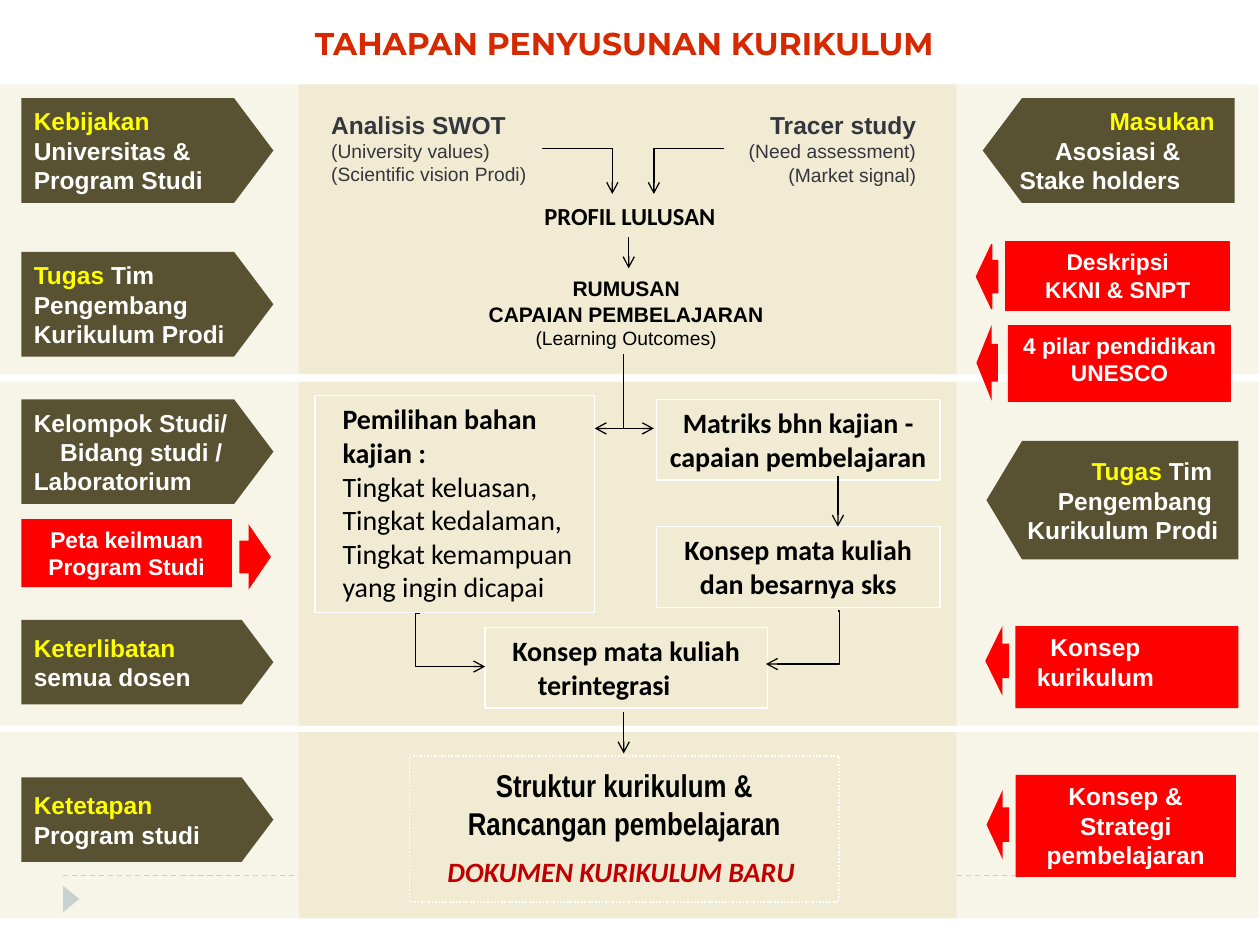
from dataclasses import dataclass

from lxml import etree
from pptx import Presentation
from pptx.dml.color import RGBColor
from pptx.enum import dml, shapes, text
from pptx.oxml import ns
from pptx.util import Inches, Pt

COLORS = {
    "sand": "F1EBD3", "olive": "585232", "red": "FF0000", "yellow": "FFFF00",
    "white": "FFFFFF", "black": "000000", "slate": "35353E", "title": "D62900",
    "crimson": "C00000", "blue": "9FB8CD",
}
KIND = shapes.MSO_SHAPE
ALIGN = text.PP_ALIGN
ANCHOR = text.MSO_ANCHOR


@dataclass
class Style:
    size: float
    font: str = "Arial"
    color: str = "white"
    bold: bool = True
    italic: bool = False


@dataclass
class Line:
    """One paragraph: a yellow lead, its text, and indents in inches."""
    text: str
    lead: str = ""
    left: float = 0
    right: float = 0
    style: Style = None


BANNER = Style(14)
LABEL = Style(13)
STEP = Style(16, "Calibri", "black")
DETAIL = Style(16, "Calibri", "black", bold=False)
SOURCE = Style(14, color="slate")
SOURCE_NOTE = Style(11, color="slate", bold=False)


def rgb(name):
    return RGBColor.from_string(COLORS[name])


def format_span(span, style, color):
    font = span.font
    font.name, font.size = style.font, Pt(style.size)
    font.bold, font.italic = style.bold, style.italic
    font.color.rgb = rgb(color)


def write(box, lines, style, align=ALIGN.LEFT, anchor=ANCHOR.TOP):
    frame = box.text_frame
    frame.word_wrap = True
    frame.vertical_anchor = anchor
    for index, item in enumerate(lines):
        line = item if isinstance(item, Line) else Line(item)
        para = frame.add_paragraph() if index else frame.paragraphs[0]
        para.alignment = align
        para.text = line.lead or line.text
        if line.lead and line.text:
            para.add_run().text = line.text
        for number, span in enumerate(para.runs):
            look = line.style or style
            is_lead = line.lead and number == 0
            format_span(span, look, "yellow" if is_lead else look.color)
        props = para._p.get_or_add_pPr()
        for name, indent in (("marL", line.left), ("marR", line.right)):
            if indent:
                props.set(name, str(Inches(indent)))


def add_box(page, kind, at, fill=None, outline=None, alpha=None, mirrored=False):
    box = page.shapes.add_shape(kind, *map(Inches, at))
    box.shadow.inherit = False
    if fill:
        box.fill.solid()
        box.fill.fore_color.rgb = rgb(fill)
    else:
        box.fill.background()
    if outline:
        box.line.color.rgb = rgb(outline)
        box.line.width = Pt(0.75)
    else:
        box.line.fill.background()
    if alpha:
        color = box.element.spPr.find(".//" + ns.qn("a:srgbClr"))
        etree.SubElement(color, ns.qn("a:alpha"), val=str(alpha * 1000))
    if mirrored:
        box.element.spPr.xfrm.set("flipH", "1")
    return box


def add_text(page, at, lines, style, align=ALIGN.CENTER, anchor=ANCHOR.TOP):
    write(page.shapes.add_textbox(*map(Inches, at)), lines, style, align, anchor)


def add_banner(page, at, lines, mirrored=False, point=0.375):
    box = add_box(page, KIND.PENTAGON, at, "olive", mirrored=mirrored)
    box.adjustments[0] = point
    align = ALIGN.RIGHT if mirrored else ALIGN.LEFT
    write(box, lines, BANNER, align, ANCHOR.MIDDLE)


def add_red_label(page, at, arrow_at, lines, style=LABEL, mirrored=True, outline=None):
    box = add_box(page, KIND.RECTANGLE, at, "red", outline)
    write(box, lines, style, ALIGN.CENTER)
    arrow = add_box(page, KIND.RIGHT_ARROW, arrow_at, "red", outline, mirrored=mirrored)
    arrow.adjustments[1] = 0.71


def add_step(page, at, lines, style=STEP, align=ALIGN.CENTER):
    box = add_box(page, KIND.RECTANGLE, at, outline="white")
    write(box, lines, style, align)


def add_line(page, start, end, ends=("tailEnd",), bend=None, color="black"):
    """Draw a line; bend is where an elbow turns, as a share of its width."""
    kind = shapes.MSO_CONNECTOR.STRAIGHT if bend is None else shapes.MSO_CONNECTOR.ELBOW
    line = page.shapes.add_connector(kind, *map(Inches, start + end))
    line.line.color.rgb = rgb(color)
    line.line.width = Pt(0.75)
    props = line.element.spPr
    if bend is not None:
        guides = props.find(".//" + ns.qn("a:avLst"))
        etree.SubElement(guides, ns.qn("a:gd"), name="adj1", fmla=f"val {round(bend * 100000)}")
    for name in ends:
        etree.SubElement(props.find(ns.qn("a:ln")), ns.qn("a:" + name), type="arrow")
    etree.SubElement(props, ns.qn("a:effectLst"))
    return line


def add_backdrop(page):
    rule = add_line(page, (0.5, 6.95), (9.5, 6.95), ends=(), color="blue")
    rule.line.dash_style = dml.MSO_LINE.DASH
    add_box(page, KIND.ISOSCELES_TRIANGLE, (0.46, 7.07, 0.21, 0.13), "blue").rotation = 90
    for top, height in ((0.67, 2.3), (3.03, 2.73), (5.81, 1.48)):
        for left, width, alpha in ((0, 2.37, 50), (7.53, 2.46, 50), (2.37, 5.22, None)):
            add_box(page, KIND.RECTANGLE, (left, top, width, height), "sand", alpha=alpha)


def add_side_notes(page):
    left_banners = (
        (0.78, 0.83, [Line("Universitas & Program Studi", "Kebijakan ")]),
        (2, 0.83, [Line(" Tim", "Tugas"), "Pengembang Kurikulum Prodi"]),
        (3.17, 0.83, ["Kelompok Studi/", Line("Bidang studi /", left=0.21), "Laboratorium"]),
        (4.92, 0.67, [Line("semua dosen", "Keterlibatan ")]),
        (6.17, 0.67, [Line("Program studi", "Ketetapan ")]),
    )
    for top, height, lines in left_banners:
        add_banner(page, (0.17, top, 2, height), lines)
    add_banner(page, (7.8, 0.78, 2, 0.83), [
        Line("", "Masukan", right=0.06), Line("Asosiasi &", right=0.33), "Stake holders"], True)
    add_banner(page, (7.83, 3.5, 2, 0.94), [
        Line("Tim", "Tugas ", right=0.11), "Pengembang",
        Line("Kurikulum Prodi", right=0.06)], True, 0.3)

    add_red_label(page, (0.17, 4.12, 1.67, 0.54), (1.9, 4.16, 0.25, 0.52),
                  ["Peta keilmuan Program Studi"], mirrored=False)
    add_red_label(page, (7.98, 1.92, 1.78, 0.54), (7.75, 1.94, 0.17, 0.51),
                  ["Deskripsi", "KKNI & SNPT"], outline="red")
    add_red_label(page, (8, 2.58, 1.77, 0.61), (7.75, 2.58, 0.17, 0.6),
                  ["4 pilar pendidikan UNESCO"])
    add_red_label(page, (8.06, 4.97, 1.77, 0.65), (7.82, 4.97, 0.19, 0.55),
                  [Line("Konsep", right=0.5), "kurikulum"], BANNER)
    add_red_label(page, (8.06, 6.15, 1.75, 0.81), (7.83, 6.27, 0.18, 0.55),
                  ["Konsep & Strategi pembelajaran"], BANNER)


def add_outcomes(page):
    add_text(page, (2.53, 0.82, 1.75, 0.71), [
        "Analisis SWOT", Line("(University values)", style=SOURCE_NOTE),
        Line("(Scientific vision Prodi)", style=SOURCE_NOTE)], SOURCE, ALIGN.LEFT)
    add_text(page, (5.76, 0.82, 1.61, 0.71), [
        "Tracer study", Line("(Need assessment)", style=SOURCE_NOTE),
        Line("(Market signal)", style=SOURCE_NOTE)], SOURCE, ALIGN.RIGHT, ANCHOR.MIDDLE)
    add_text(page, (4.21, 1.55, 1.58, 0.34), ["PROFIL LULUSAN"], Style(14, "Calibri", "black"))
    add_text(page, (3.68, 2.14, 2.58, 0.69), [
        "RUMUSAN", "CAPAIAN PEMBELAJARAN",
        Line("(Learning Outcomes)", style=Style(11, color="black", bold=False))],
        Style(12, color="black"))
    add_line(page, (4.3, 1.18), (4.86, 1.54), bend=1)
    add_line(page, (5.75, 1.18), (5.19, 1.54), bend=1)
    add_line(page, (4.99, 1.88), (4.99, 2.13))


def add_course_steps(page):
    add_step(page, (2.5, 3.14, 2.22, 1.72), [
        Line("Pemilihan bahan kajian :", left=0.12, style=STEP),
        Line("Tingkat keluasan,", left=0.12), Line("Tingkat kedalaman,", left=0.12),
        Line("Tingkat kemampuan yang ingin dicapai", left=0.12)], DETAIL, ALIGN.LEFT)
    add_step(page, (5.21, 3.17, 2.25, 0.64), ["Matriks bhn kajian -", "capaian pembelajaran"])
    add_step(page, (5.21, 4.18, 2.25, 0.64), ["Konsep mata kuliah dan besarnya sks"])
    add_step(page, (3.85, 4.98, 2.24, 0.64),
             ["Konsep mata kuliah", Line("terintegrasi", right=0.35)])
    add_line(page, (4.95, 2.81), (4.95, 3.4), ends=())
    add_line(page, (4.72, 3.4), (5.19, 3.4), ends=("headEnd", "tailEnd"))
    add_line(page, (6.65, 3.78), (6.65, 4.18))
    add_line(page, (3.33, 4.87), (3.85, 5.29), bend=-0.06)
    add_line(page, (6.65, 4.85), (6.08, 5.27), bend=-0.02)


def add_result(page):
    frame = add_box(page, KIND.RECTANGLE, (3.25, 6, 3.41, 1.16), outline="white")
    frame.line.width = Pt(1)
    frame.line.dash_style = dml.MSO_LINE.ROUND_DOT
    add_text(page, (3.54, 6.03, 2.83, 0.71),
             ["Struktur kurikulum &", "Rancangan pembelajaran"], Style(18, "Arial Narrow", "black"))
    add_text(page, (3.26, 6.73, 3.34, 0.36), ["DOKUMEN KURIKULUM BARU"],
             Style(16, "Calibri", "crimson", italic=True))
    add_line(page, (4.95, 5.65), (4.95, 5.98))


def main():
    deck = Presentation()
    deck.slide_width, deck.slide_height = Inches(10), Inches(7.5)
    page = deck.slides.add_slide(deck.slide_layouts[6])
    add_backdrop(page)
    add_text(page, (2.04, 0.14, 5.83, 0.4), ["TAHAPAN PENYUSUNAN KURIKULUM"],
             Style(18, "Montserrat", "title"))
    add_side_notes(page)
    add_outcomes(page)
    add_course_steps(page)
    add_result(page)
    deck.save("out.pptx")


if __name__ == "__main__":
    main()
